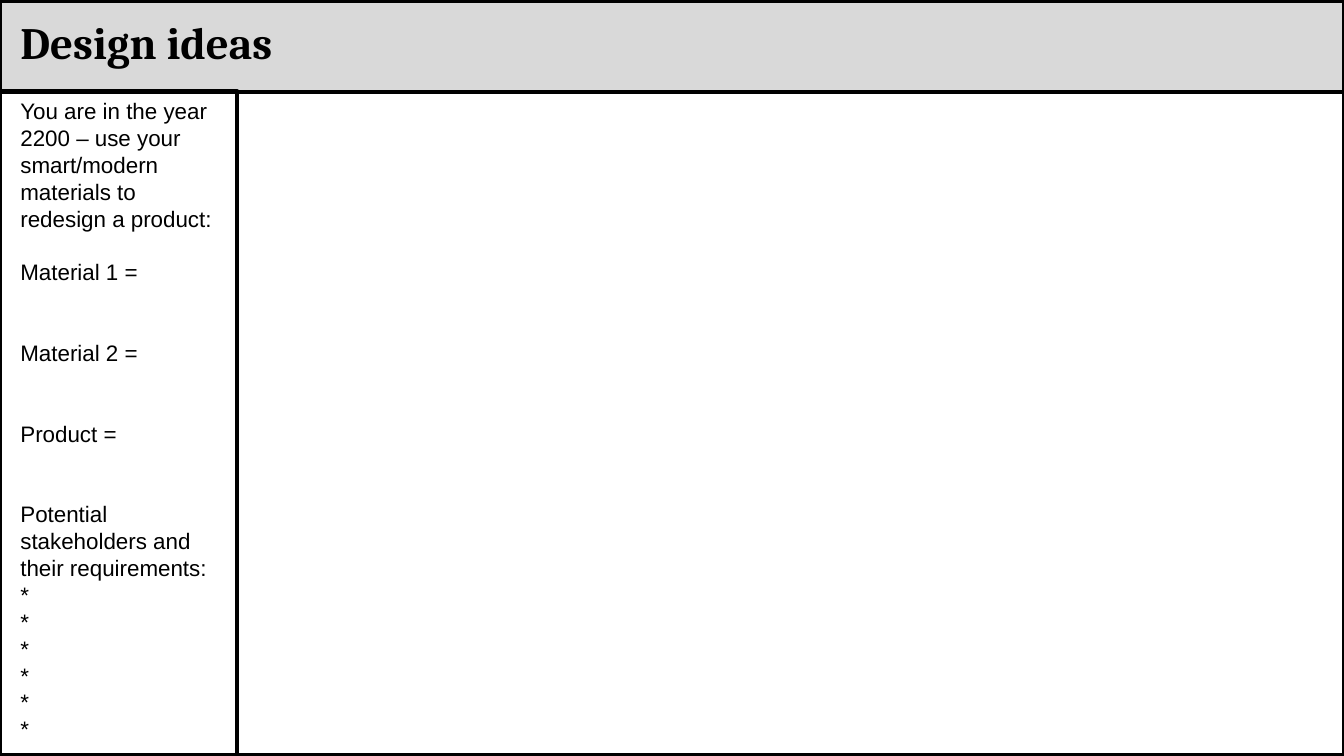
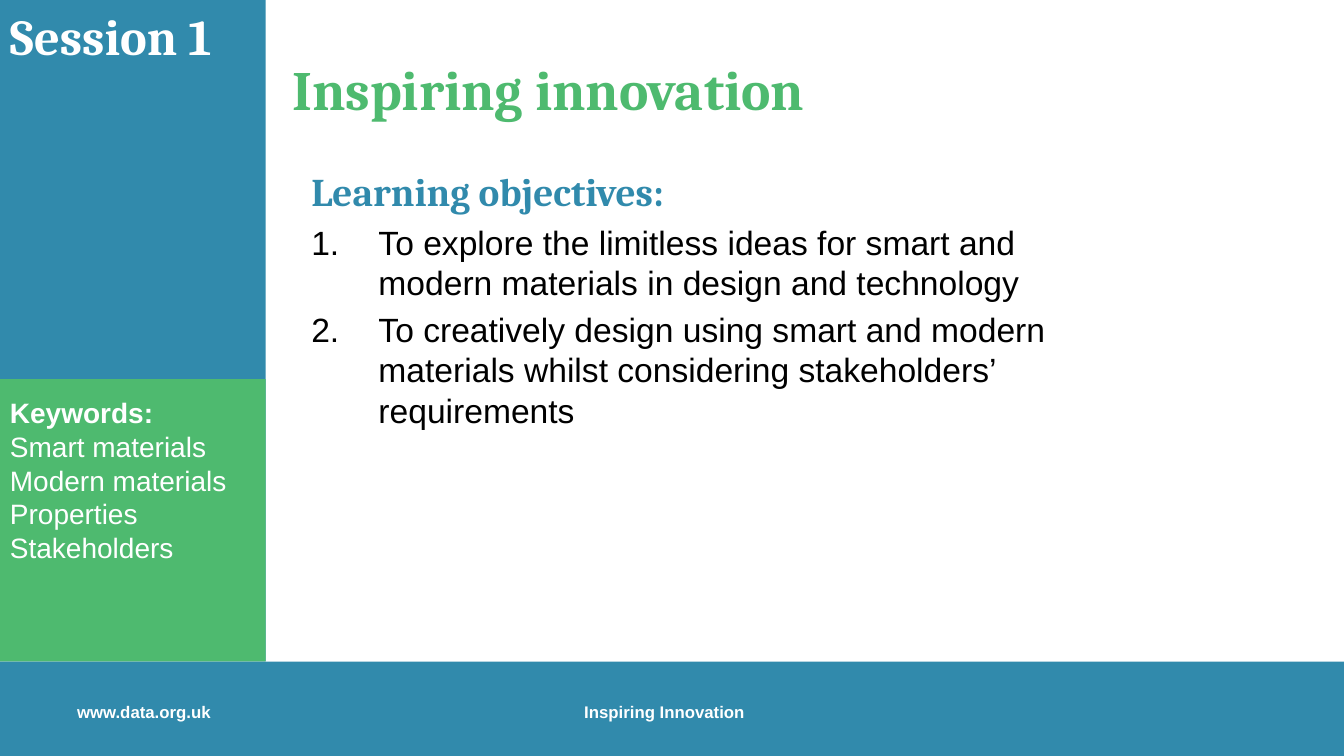
from dataclasses import dataclass

from lxml import etree
from pptx import Presentation
from pptx.dml.color import RGBColor
from pptx.enum.shapes import MSO_SHAPE
from pptx.enum.text import MSO_ANCHOR, PP_ALIGN
from pptx.oxml.ns import qn
from pptx.util import Emu, Pt

RECTANGLE = MSO_SHAPE.RECTANGLE
TOP = MSO_ANCHOR.TOP
LEFT = PP_ALIGN.LEFT
EMU_PER_PX = 9525
BLANK_LAYOUT = 6
SLIDE_W, SLIDE_H = 1280, 720
HEADER_H, TASK_W = 88, 226
SIDEBAR_W, KEYWORDS_Y, FOOTER_Y = 253, 361, 630


@dataclass(frozen=True)
class Theme:
    """Colours, fonts and type sizes of the deck."""
    blue: str = "318AAC"
    green: str = "4EBA6F"
    grey: str = "D9D9D9"
    black: str = "000000"
    white: str = "FFFFFF"
    heading_font: str = "Cambria"
    body_font: str = "Arial"
    title: float = 39.6
    session: float = 36
    header: float = 32
    subtitle: float = 28
    objective: float = 24
    keyword: float = 20
    task: float = 16
    footer: float = 12
    border: float = 3
    objective_gap: float = 4.8
    task_line: float = 19.2


THEME = Theme()


@dataclass(frozen=True)
class Line:
    """One paragraph with its style."""
    text: str
    size: float
    color: str = THEME.black
    font: str = THEME.body_font
    bold: bool = False
    before: float = 0
    margin: int = 0
    hanging: int = 0
    numbered: bool = False


def px(length):
    """Turn pixels into EMU."""
    return Emu(length * EMU_PER_PX)


def heading(text, size, color):
    """Return a line in the shared title style."""
    return Line(text, size, color, THEME.heading_font, True)


def write(frame, lines):
    """Fill a text frame with styled lines."""
    frame.word_wrap = True
    frame.vertical_anchor = TOP
    for index, line in enumerate(lines):
        paragraph = frame.add_paragraph() if index else frame.paragraphs[0]
        properties = paragraph._p.get_or_add_pPr()
        properties.set("marL", str(px(line.margin)))
        properties.set("indent", str(px(-line.hanging)))
        paragraph.alignment = LEFT
        if line.before:
            paragraph.space_before = Pt(line.before)
        if line.numbered:
            etree.SubElement(properties, qn("a:buAutoNum"), type="arabicPeriod")
        run = paragraph.add_run()
        run.text = line.text
        run.font.name = line.font
        run.font.size = Pt(line.size)
        run.font.bold = line.bold
        run.font.color.rgb = RGBColor.from_string(line.color)


def add_text(slide, box, *lines):
    """Add a text box."""
    write(slide.shapes.add_textbox(*map(px, box)).text_frame, lines)


def add_panel(slide, box, fill=None, border=None):
    """Add a rectangle with an optional fill and border."""
    panel = slide.shapes.add_shape(RECTANGLE, *map(px, box))
    panel.shadow.inherit = False
    if fill:
        panel.fill.solid()
        panel.fill.fore_color.rgb = RGBColor.from_string(fill)
    else:
        panel.fill.background()
    if border:
        panel.line.color.rgb = RGBColor.from_string(border)
        panel.line.width = Pt(THEME.border)
    else:
        panel.line.fill.background()
    return panel


def add_footer(slide):
    """Add the bottom band and its labels."""
    add_panel(slide, (0, FOOTER_Y, SLIDE_W, SLIDE_H - FOOTER_Y), THEME.blue)
    for left, label in ((64, "www.data.org.uk"), (547, "Inspiring Innovation")):
        add_text(slide, (left, 664, 218, 34),
                 Line(label, THEME.footer, THEME.white, bold=True))


def build_worksheet(slide):
    """Build the design ideas worksheet."""
    prompts = (
        ("You are in the year 2200 – use your smart/modern materials to redesign a product:", 0),
        ("Material 1 =", 1),
        ("Material 2 =", 2),
        ("Product =", 2),
        ("Potential stakeholders and their requirements:", 2),
    ) + (("*", 0),) * 6
    add_panel(slide, (0, 1, SLIDE_W, HEADER_H - 1), THEME.grey, THEME.black)
    add_panel(slide, (0, 0, SLIDE_W, SLIDE_H - 1), border=THEME.black)
    add_panel(slide, (0, HEADER_H - 1, TASK_W, SLIDE_H - HEADER_H + 1), border=THEME.black)
    add_text(slide, (0, HEADER_H, TASK_W, 630),
             *(Line(text, THEME.task, before=gap * THEME.task_line, margin=10)
               for text, gap in prompts))
    add_text(slide, (10, 9, 640, 61), heading("Design ideas", THEME.header, THEME.black))


def build_session(slide):
    """Build the session introduction."""
    objectives = (
        "To explore the limitless ideas for smart and modern materials in design and technology",
        "To creatively design using smart and modern materials whilst considering stakeholders’ requirements",
    )
    keywords = ("Smart materials", "Modern materials", "Properties", "Stakeholders")
    add_footer(slide)
    add_panel(slide, (0, 0, SIDEBAR_W, FOOTER_Y), THEME.blue)
    add_text(slide, (287, 155, 771, 285),
             heading("Learning objectives:", THEME.subtitle, THEME.blue),
             *(Line(text, THEME.objective, before=THEME.objective_gap,
                    margin=64, hanging=64, numbered=True) for text in objectives))
    keyword_panel = add_panel(
        slide, (0, KEYWORDS_Y, SIDEBAR_W, FOOTER_Y - KEYWORDS_Y), THEME.green)
    keyword_panel.text_frame.margin_top = px(16)
    write(keyword_panel.text_frame,
          [Line("Keywords:", THEME.keyword, THEME.white, bold=True)]
          + [Line(word, THEME.keyword, THEME.white) for word in keywords])
    add_text(slide, (269, 48, 581, 72),
             heading("Inspiring innovation", THEME.title, THEME.green))
    add_text(slide, (0, 0, SIDEBAR_W, 68), heading("Session 1", THEME.session, THEME.white))


def main():
    """Build and save the deck."""
    deck = Presentation()
    deck.slide_width, deck.slide_height = px(SLIDE_W), px(SLIDE_H)
    for build in (build_worksheet, build_session):
        build(deck.slides.add_slide(deck.slide_layouts[BLANK_LAYOUT]))
    deck.save("out.pptx")


if __name__ == "__main__":
    main()
